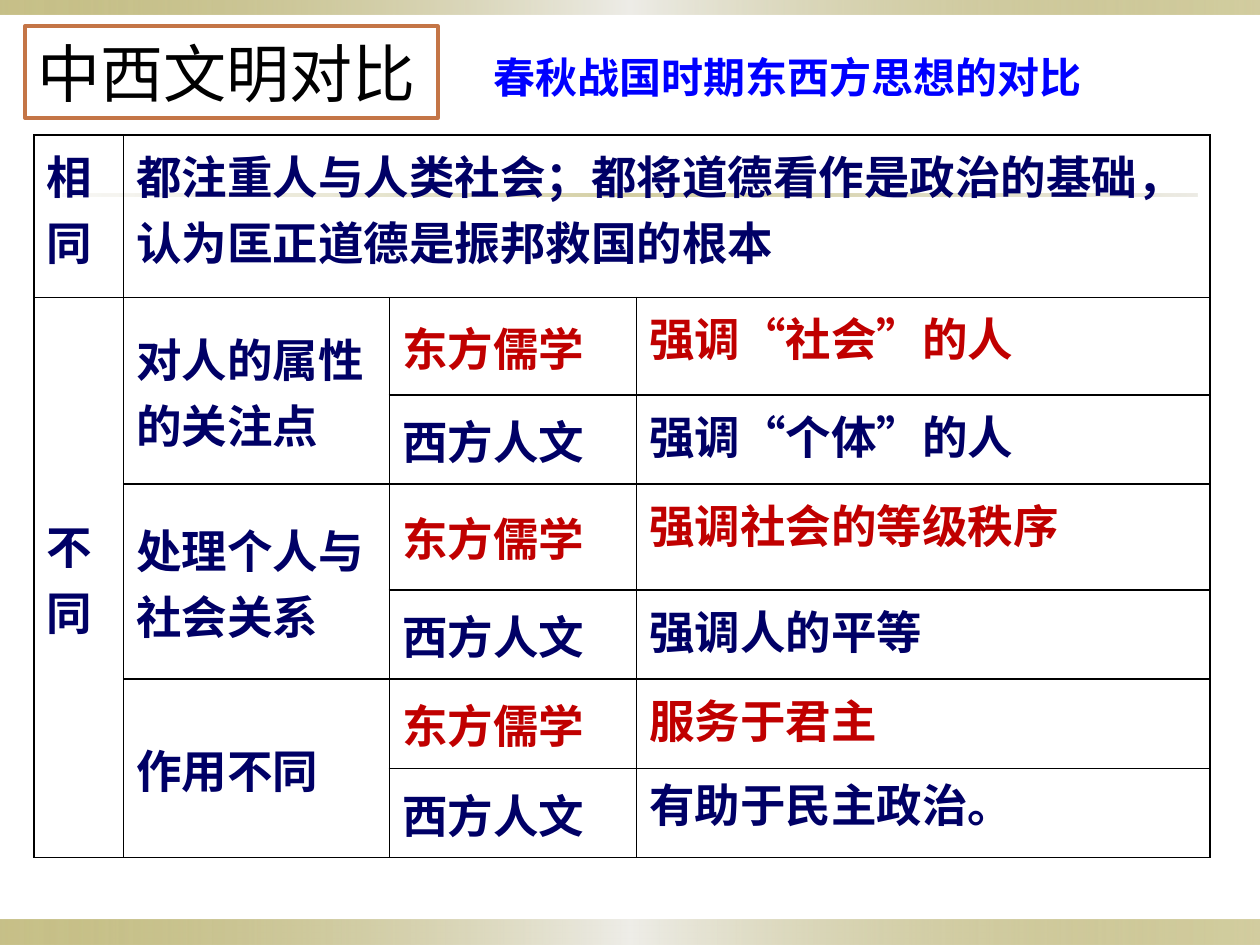
from lxml.etree import SubElement
from pptx import Presentation
from pptx.dml.color import RGBColor
from pptx.enum.lang import MSO_LANGUAGE_ID as Language
from pptx.enum.shapes import MSO_SHAPE as Shape
from pptx.enum.text import MSO_ANCHOR as Anchor
from pptx.oxml.ns import qn
from pptx.util import Cm, Pt

NAVY = RGBColor(0x00, 0x00, 0x66)
RED = RGBColor(0xC0, 0x00, 0x00)
BLUE = RGBColor(0x00, 0x00, 0xFF)
BLACK = RGBColor(0x00, 0x00, 0x00)
WHITE = RGBColor(0xFF, 0xFF, 0xFF)
COPPER = RGBColor(0xC4, 0x75, 0x46)
OLIVE = RGBColor(0x91, 0x84, 0x15)
PALE = RGBColor(0xEE, 0xED, 0xE8)
SAND = RGBColor(0xDC, 0xD9, 0xCC)

# Content
TITLE = "中西文明对比"
SUBTITLE = "春秋战国时期东西方思想的对比"
SAME = ("相同", "都注重人与人类社会；都将道德看作是政治的基础，认为匡正道德是振邦救国的根本")
DIFFERENT = "不同"
EAST, WEST = "东方儒学", "西方人文"
TOPICS = [  # topic, eastern view, western view
    ("对人的属性的关注点", "强调“社会”的人", "强调“个体”的人"),
    ("处理个人与社会关系", "强调社会的等级秩序", "强调人的平等"),
    ("作用不同", "服务于君主", "有助于民主政治。"),
]

# Layout in centimetres
COLUMNS = [1.8, 5.36, 4.98, 11.56]
ROWS = [3.28, 1.96, 1.8, 2.13, 1.8, 1.8, 1.8]
BAND_STOPS = [(0, OLIVE, 50), (50, PALE, 100), (100, OLIVE, 40)]
RULE_STOPS = [(0, SAND, 20), (50, OLIVE, 40), (100, SAND, 50)]
BANDS = [  # left, top, width, height, gradient stops
    (0, 18.54, 25.4, 0.51, BAND_STOPS),
    (0, 0, 25.4, 0.3, BAND_STOPS),
    (1.27, 3.91, 22.86, 0.05, RULE_STOPS),
]


def write(frame, text, *, font, size, color, bold=False, spacing=None):
    frame.word_wrap = True
    paragraph = frame.paragraphs[0]
    paragraph.line_spacing = spacing
    run = paragraph.add_run()
    run.text = text
    run.font.name = font
    run.font.size = Pt(size)
    run.font.bold = bold
    run.font.color.rgb = color
    run.font.language_id = Language.SIMPLIFIED_CHINESE


def add_band(slide, left, top, width, height, stops):
    band = slide.shapes.add_shape(Shape.RECTANGLE, Cm(left), Cm(top), Cm(width), Cm(height))
    band.shadow.inherit = False
    band.line.fill.background()
    band.fill.gradient()
    band.fill.gradient_angle = 0
    stop_list = band._element.spPr.find(".//" + qn("a:gsLst"))
    for stop in list(stop_list):
        stop_list.remove(stop)
    for position, color, opacity in stops:
        stop = SubElement(stop_list, qn("a:gs"), pos=str(position * 1000))
        fill = SubElement(stop, qn("a:srgbClr"), val=str(color))
        SubElement(fill, qn("a:alpha"), val=str(opacity * 1000))


def outline(cell):
    properties = cell._tc.get_or_add_tcPr()
    for side in ("a:lnL", "a:lnR", "a:lnT", "a:lnB"):
        line = SubElement(properties, qn(side), w=str(Pt(1)))
        fill = SubElement(line, qn("a:solidFill"))
        SubElement(fill, qn("a:srgbClr"), val=str(BLACK))
    cell.fill.background()


def fill_cell(cell, text, *, font="Times New Roman", color=NAVY, anchor=Anchor.MIDDLE, spacing=None):
    cell.vertical_anchor = anchor
    write(cell.text_frame, text, font=font, size=26, color=color, bold=True, spacing=spacing)


def add_comparison(slide):
    table = slide.shapes.add_table(len(ROWS), len(COLUMNS), Cm(0.69), Cm(2.72),
                                   Cm(sum(COLUMNS)), Cm(sum(ROWS))).table
    table.first_row = table.horz_banding = False
    for column, width in zip(table.columns, COLUMNS):
        column.width = Cm(width)
    for row, height in zip(table.rows, ROWS):
        row.height = Cm(height)
    for cell in table.iter_cells():
        outline(cell)

    # What both sides share
    table.cell(0, 1).merge(table.cell(0, 3))
    fill_cell(table.cell(0, 0), SAME[0], anchor=Anchor.TOP)
    fill_cell(table.cell(0, 1), SAME[1], font="Arial", anchor=Anchor.TOP)

    # Where they differ: two rows per topic
    table.cell(1, 0).merge(table.cell(len(ROWS) - 1, 0))
    fill_cell(table.cell(1, 0), DIFFERENT)
    for index, (topic, east_view, west_view) in enumerate(TOPICS):
        first = 1 + 2 * index
        table.cell(first, 1).merge(table.cell(first + 1, 1))
        fill_cell(table.cell(first, 1), topic)
        sides = [(EAST, east_view, RED), (WEST, west_view, NAVY)]
        for row, (side, view, color) in enumerate(sides, first):
            fill_cell(table.cell(row, 2), side, color=color)
            fill_cell(table.cell(row, 3), view, font="Arial", color=color, anchor=Anchor.TOP,
                      spacing=0.9 if row == len(ROWS) - 1 else None)


def main():
    presentation = Presentation()
    presentation.slide_width, presentation.slide_height = Cm(25.4), Cm(19.05)
    slide = presentation.slides.add_slide(presentation.slide_layouts[6])

    for band in BANDS:
        add_band(slide, *band)
    add_comparison(slide)

    # Framed title
    title = slide.shapes.add_textbox(Cm(0.5), Cm(0.53), Cm(8.33), Cm(1.85))
    title.fill.solid()
    title.fill.fore_color.rgb = WHITE
    title.line.color.rgb = COPPER
    title.line.width = Pt(2)
    title.text_frame.vertical_anchor = Anchor.MIDDLE
    write(title.text_frame, TITLE, font="Karla", size=36, color=BLACK)

    # Subtitle
    subtitle = slide.shapes.add_textbox(Cm(9.7), Cm(0.91), Cm(14), Cm(1.27))
    write(subtitle.text_frame, SUBTITLE, font="Arial", size=24, color=BLUE, bold=True)

    presentation.save("out.pptx")


if __name__ == "__main__":
    main()
